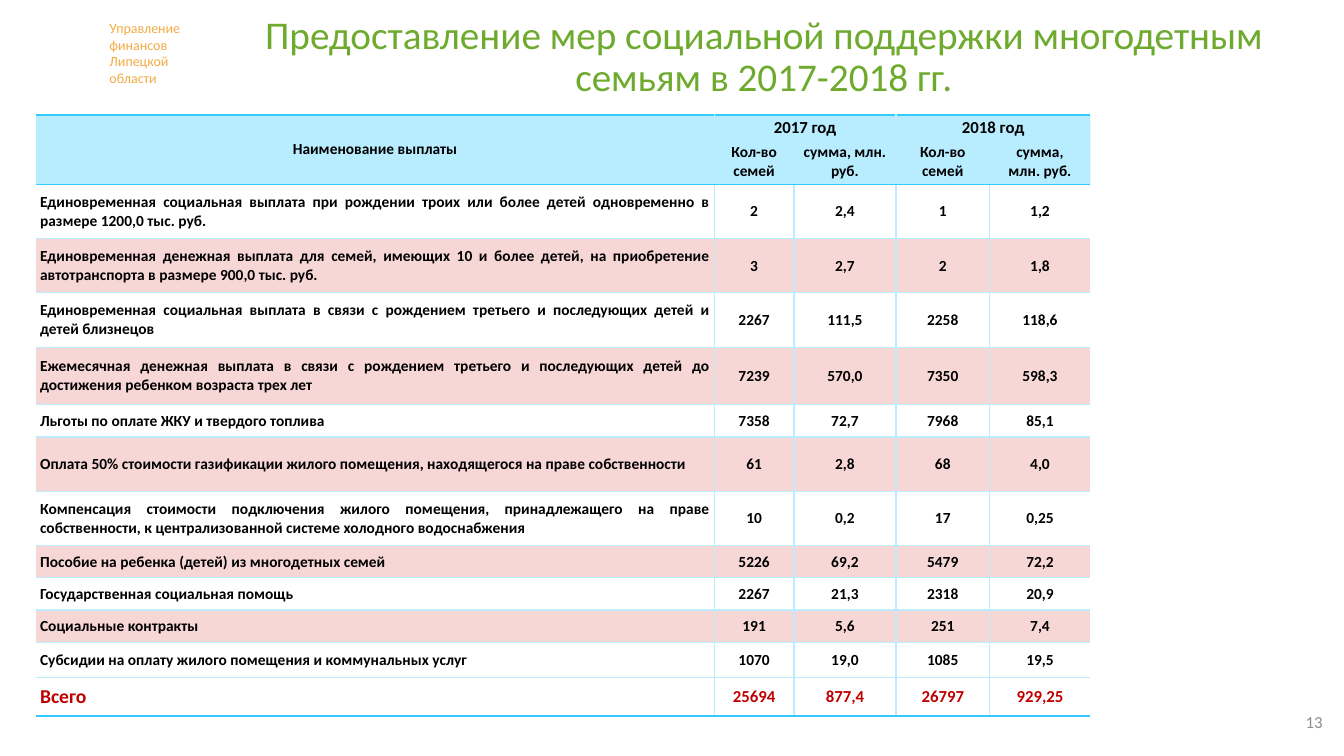
from lxml import etree
from pptx import Presentation
from pptx.dml.color import RGBColor
from pptx.enum.text import MSO_ANCHOR, MSO_AUTO_SIZE, PP_ALIGN
from pptx.oxml.ns import qn
from pptx.util import Cm, Pt

LEFT, CENTER, RIGHT, JUSTIFY = PP_ALIGN.LEFT, PP_ALIGN.CENTER, PP_ALIGN.RIGHT, PP_ALIGN.JUSTIFY
TOP, MIDDLE = MSO_ANCHOR.TOP, MSO_ANCHOR.MIDDLE
NO_AUTOFIT = MSO_AUTO_SIZE.NONE
FONT = "Calibri"
COLORS = {"title": "6EAA2E", "agency": "F2AC44", "number": "8C8C8C", "text": "000000",
          "total": "C00000", "header": "78DCFF", "band": "F7D6D6",
          "grid": "BBEDFF", "rule": "34CAFF"}

# Content
TITLE = "Предоставление мер социальной поддержки многодетным семьям в 2017-2018 гг."
AGENCY = "Управление финансов Липецкой области"
PAGE_NUMBER = "13"
HEADER = [
    ("Наименование выплаты", "2017 год", "", "2018 год", ""),
    ("", "Кол-во семей", "сумма, млн. руб.", "Кол-во семей", "сумма,\nмлн. руб."),
]
PAYMENTS = [
    ("Единовременная социальная выплата при рождении троих или более детей одновременно "
     "в размере 1200,0 тыс. руб.", "2", "2,4", "1", "1,2"),
    ("Единовременная денежная выплата для семей, имеющих 10 и более детей, на приобретение "
     "автотранспорта в размере 900,0 тыс. руб.", "3", "2,7", "2", "1,8"),
    ("Единовременная социальная выплата в связи с рождением третьего и последующих детей "
     "и детей близнецов", "2267", "111,5", "2258", "118,6"),
    ("Ежемесячная денежная выплата в связи с рождением третьего и последующих детей "
     "до достижения ребенком возраста трех лет", "7239", "570,0", "7350", "598,3"),
    ("Льготы по оплате ЖКУ и твердого топлива", "7358", "72,7", "7968", "85,1"),
    ("Оплата 50% стоимости газификации жилого помещения, находящегося на праве собственности",
     "61", "2,8", "68", "4,0"),
    ("Компенсация стоимости подключения жилого помещения, принадлежащего на праве "
     "собственности, к централизованной системе холодного водоснабжения",
     "10", "0,2", "17", "0,25"),
    ("Пособие на ребенка (детей) из многодетных семей", "5226", "69,2", "5479", "72,2"),
    ("Государственная социальная помощь", "2267", "21,3", "2318", "20,9"),
    ("Социальные контракты", "191", "5,6", "251", "7,4"),
    ("Субсидии на оплату жилого помещения и коммунальных услуг",
     "1070", "19,0", "1085", "19,5"),
]
TOTAL = ("Всего", "25694", "877,4", "26797", "929,25")
ROWS = HEADER + PAYMENTS + [TOTAL]
COLUMN_WIDTHS = [17.09, 2.01, 2.57, 2.36, 2.54]
ROW_HEIGHTS = [0.62, 1.12, 1.37, 1.37, 1.37, 1.45, 0.81, 1.37, 1.37, 0.81, 0.81, 0.81, 0.89, 0.97]
HEADER_ROWS, LAST_ROW, LAST_COLUMN = len(HEADER), len(ROWS) - 1, len(COLUMN_WIDTHS) - 1


def write(frame, text, size, color, align, bold=False):
    frame.text = text
    frame.word_wrap = True
    for para in frame.paragraphs:
        para.alignment = align
        for span in para.runs:
            span.font.name, span.font.size, span.font.bold = FONT, Pt(size), bold
            span.font.color.rgb = RGBColor.from_string(COLORS[color])


def add_label(page, place, text, size, color, align, anchor):
    frame = page.shapes.add_textbox(*map(Cm, place)).text_frame
    write(frame, text, size, color, align)
    frame.vertical_anchor = anchor


def set_borders(cell, edges):
    """Draw the four edges; None leaves an edge open."""
    properties = cell._tc.get_or_add_tcPr()
    for position, (side, color) in enumerate(edges.items()):
        line = etree.Element(qn("a:ln" + side), w=str(Pt(1)))
        if color:
            fill = etree.SubElement(line, qn("a:solidFill"))
            etree.SubElement(fill, qn("a:srgbClr"), val=COLORS[color])
        else:
            etree.SubElement(line, qn("a:noFill"))
        properties.insert(position, line)


def fill_cell(cell, row):
    if row < HEADER_ROWS or (row % 2 and row < LAST_ROW):
        cell.fill.solid()
        name = "header" if row < HEADER_ROWS else "band"
        cell.fill.fore_color.rgb = RGBColor.from_string(COLORS[name])
        if name == "header":
            tint = cell._tc.tcPr.find(".//" + qn("a:srgbClr"))
            etree.SubElement(tint, qn("a:alpha"), val="52000")
    else:
        cell.fill.background()


def format_cell(cell, row, column):
    is_header, is_total, is_name = row < HEADER_ROWS, row == LAST_ROW, column == 0
    # Text
    size = 11
    if is_total:
        size = 14 if is_name else 12
    elif row == 0 and not is_name:
        size = 12
    align = JUSTIFY if is_name and not is_header else CENTER
    write(cell.text_frame, ROWS[row][column], size, "total" if is_total else "text", align, True)
    cell.vertical_anchor = MIDDLE
    # Margins
    if is_name and not is_header:
        side, top, bottom = 0.1, 0.1, 0.1
    elif is_total:
        side, top, bottom = 0.02, 0.02, 0
    else:
        side, top, bottom = 0.08, 0, 0
    cell.margin_left = cell.margin_right = Cm(side)
    cell.margin_top, cell.margin_bottom = Cm(top), Cm(bottom)
    # Fill and edges
    fill_cell(cell, row)
    bottom_row = row + cell.span_height - 1
    right_column = column + cell.span_width - 1
    set_borders(cell, {
        "L": "grid" if column else None,
        "R": "grid" if right_column < LAST_COLUMN else None,
        "T": "rule" if row in (0, HEADER_ROWS) else "grid",
        "B": "rule" if bottom_row in (HEADER_ROWS - 1, LAST_ROW) else "grid",
    })


def add_payment_table(page):
    table = page.shapes.add_table(
        len(ROWS), len(COLUMN_WIDTHS), Cm(0.91), Cm(2.9),
        Cm(sum(COLUMN_WIDTHS)), Cm(sum(ROW_HEIGHTS))).table
    table.first_row = table.horz_banding = False
    for column, width in zip(table.columns, COLUMN_WIDTHS):
        column.width = Cm(width)
    for row, height in zip(table.rows, ROW_HEIGHTS):
        row.height = Cm(height)
    table.cell(0, 0).merge(table.cell(1, 0))
    for column in (1, 3):
        table.cell(0, column).merge(table.cell(0, column + 1))
    for row in range(len(ROWS)):
        for column in range(len(COLUMN_WIDTHS)):
            format_cell(table.cell(row, column), row, column)


def main():
    deck = Presentation()
    deck.slide_width, deck.slide_height = Cm(33.87), Cm(19.05)
    page = deck.slides.add_slide(deck.slide_layouts[5])

    # Title
    title = page.shapes.title
    title.left, title.top, title.width, title.height = map(Cm, (5.33, 0.64, 27.84, 1.63))
    write(title.text_frame, TITLE, 28, "title", CENTER)
    title.text_frame.paragraphs[0].line_spacing = 0.9
    title.text_frame.vertical_anchor = MIDDLE
    title.text_frame.auto_size = NO_AUTOFIT

    # Agency, table and page number
    add_label(page, (2.51, 0.36, 2.46, 1.96), AGENCY, 10, "agency", LEFT, TOP)
    add_payment_table(page)
    add_label(page, (25.68, 17.68, 7.9, 1.02), PAGE_NUMBER, 12, "number", RIGHT, MIDDLE)

    deck.save("out.pptx")


if __name__ == "__main__":
    main()
